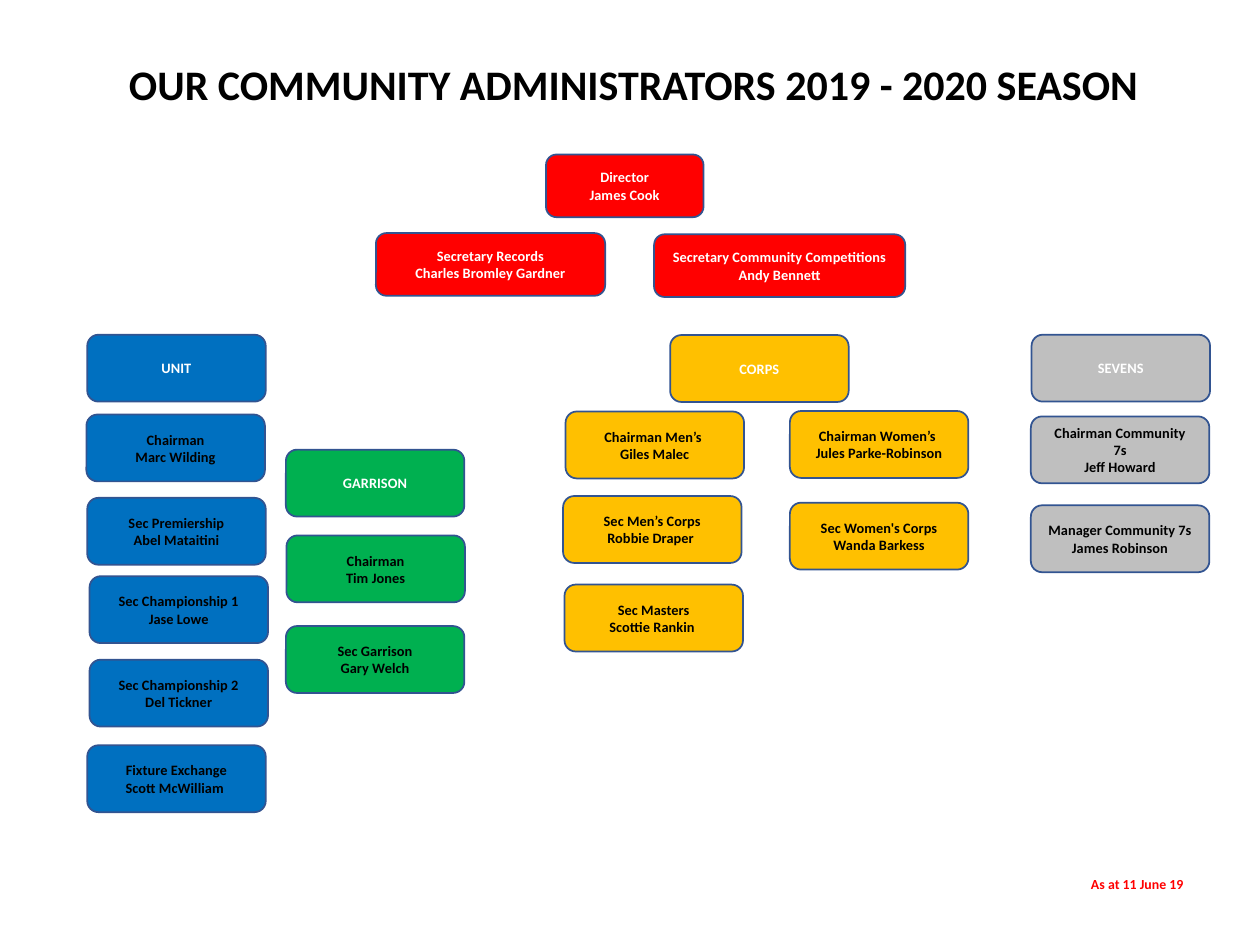
from dataclasses import dataclass

from pptx import Presentation
from pptx.dml.color import RGBColor
from pptx.enum.shapes import MSO_SHAPE
from pptx.enum.text import MSO_ANCHOR, MSO_AUTO_SIZE, PP_ALIGN
from pptx.util import Pt

ROUND = MSO_SHAPE.ROUNDED_RECTANGLE
MIDDLE = MSO_ANCHOR.MIDDLE
CENTER = PP_ALIGN.CENTER
NO_FIT = MSO_AUTO_SIZE.NONE
TITLE_ONLY = 5


@dataclass(frozen=True)
class Theme:
    font: str = "Calibri"
    title: float = 24
    label: float = 8.25
    note: float = 7.9
    black: str = "000000"
    white: str = "FFFFFF"
    red: str = "FF0000"
    blue: str = "0070C0"
    green: str = "00B050"
    gold: str = "FFC000"
    grey: str = "BFBFBF"
    edge: str = "325491"


THEME = Theme()
WIDE, HIGH = 102, 38.2
LEAD_HIGH = 35.8

# Left, top, width, text
LEADS = [
    (312, 88.3, 90, "Director\nJames Cook"),
    (214.8, 133.2, 131, "Secretary Records\nCharles Bromley Gardner"),
    (373.8, 133.9, 143.5, "Secretary Community Competitions\nAndy Bennett"),
]

# Left, top, fill, text
HEADS = [
    (49.9, 191.3, THEME.blue, "UNIT"),
    (163.4, 257, THEME.green, "GARRISON"),
    (383, 191.5, THEME.gold, "CORPS"),
    (589.5, 191.3, THEME.grey, "SEVENS"),
]

# Fill, then left, top and text of each post
POSTS = [
    (THEME.blue, [
        (49.4, 236.9, "Chairman\nMarc Wilding"),
        (49.9, 284.5, "Sec Premiership\nAbel Mataitini"),
        (51.2, 329.3, "Sec Championship 1\nJase Lowe"),
        (51.2, 377, "Sec Championship 2\nDel Tickner"),
        (49.9, 425.9, "Fixture Exchange\nScott McWilliam "),
    ]),
    (THEME.green, [
        (163.7, 306, "Chairman\nTim Jones"),
        (163.4, 357.8, "Sec Garrison\nGary Welch"),
    ]),
    (THEME.gold, [
        (323.2, 235.2, "Chairman Men’s \nGiles Malec"),
        (321.8, 283.5, "Sec Men’s Corps\nRobbie Draper "),
        (322.6, 334.1, "Sec Masters\nScottie Rankin "),
        (451.4, 234.9, "Chairman Women’s \nJules Parke-Robinson"),
        (451.4, 287.3, "Sec Women's Corps\nWanda Barkess"),
    ]),
    (THEME.grey, [
        (589.1, 238, "Chairman Community 7s\nJeff Howard"),
        (589.1, 288.8, "Manager Community 7s\nJames Robinson"),
    ]),
]


def rgb(code):
    return RGBColor.from_string(code)


def place(shape, left, top, width, height):
    shape.left, shape.top = Pt(left), Pt(top)
    shape.width, shape.height = Pt(width), Pt(height)


def write(shape, text, size, color, space=1.0):
    """Fill a shape with centred bold text, one paragraph a line."""
    frame = shape.text_frame
    frame.word_wrap = True
    frame.auto_size = NO_FIT
    frame.vertical_anchor = MIDDLE
    frame.text = text
    for para in frame.paragraphs:
        para.alignment = CENTER
        para.line_spacing = space
        font = para.font
        font.name, font.size, font.bold = THEME.font, Pt(size), True
        font.color.rgb = rgb(color)


def add_title(slide, text):
    title = slide.shapes.title
    place(title, 51.8, 27, 620.6, 45.4)
    write(title, text, THEME.title, THEME.black, 0.9)


def add_box(slide, left, top, text, fill, color, width=WIDE, height=HIGH):
    box = slide.shapes.add_shape(
        ROUND, Pt(left), Pt(top), Pt(width), Pt(height))
    box.shadow.inherit = False
    box.fill.solid()
    box.fill.fore_color.rgb = rgb(fill)
    box.line.color.rgb = rgb(THEME.edge)
    box.line.width = Pt(1)
    write(box, text, THEME.label, color)


def add_note(slide, text):
    note = slide.shapes.add_textbox(Pt(589), Pt(499), Pt(121.7), Pt(13.7))
    frame = note.text_frame
    frame.margin_left = frame.margin_right = Pt(5)
    frame.margin_top = frame.margin_bottom = Pt(2.9)
    write(note, text, THEME.note, THEME.red, 0.8)


def main():
    deck = Presentation()
    deck.slide_width, deck.slide_height = Pt(720), Pt(540)
    slide = deck.slides.add_slide(deck.slide_layouts[TITLE_ONLY])
    add_title(slide, "OUR COMMUNITY ADMINISTRATORS 2019 - 2020 SEASON")
    for left, top, width, text in LEADS:
        add_box(slide, left, top, text, THEME.red, THEME.white,
                width, LEAD_HIGH)
    for left, top, fill, text in HEADS:
        add_box(slide, left, top, text, fill, THEME.white)
    for fill, group in POSTS:
        for left, top, text in group:
            add_box(slide, left, top, text, fill, THEME.black)
    add_note(slide, "As at 11 June 19")
    deck.save("out.pptx")


if __name__ == "__main__":
    main()
